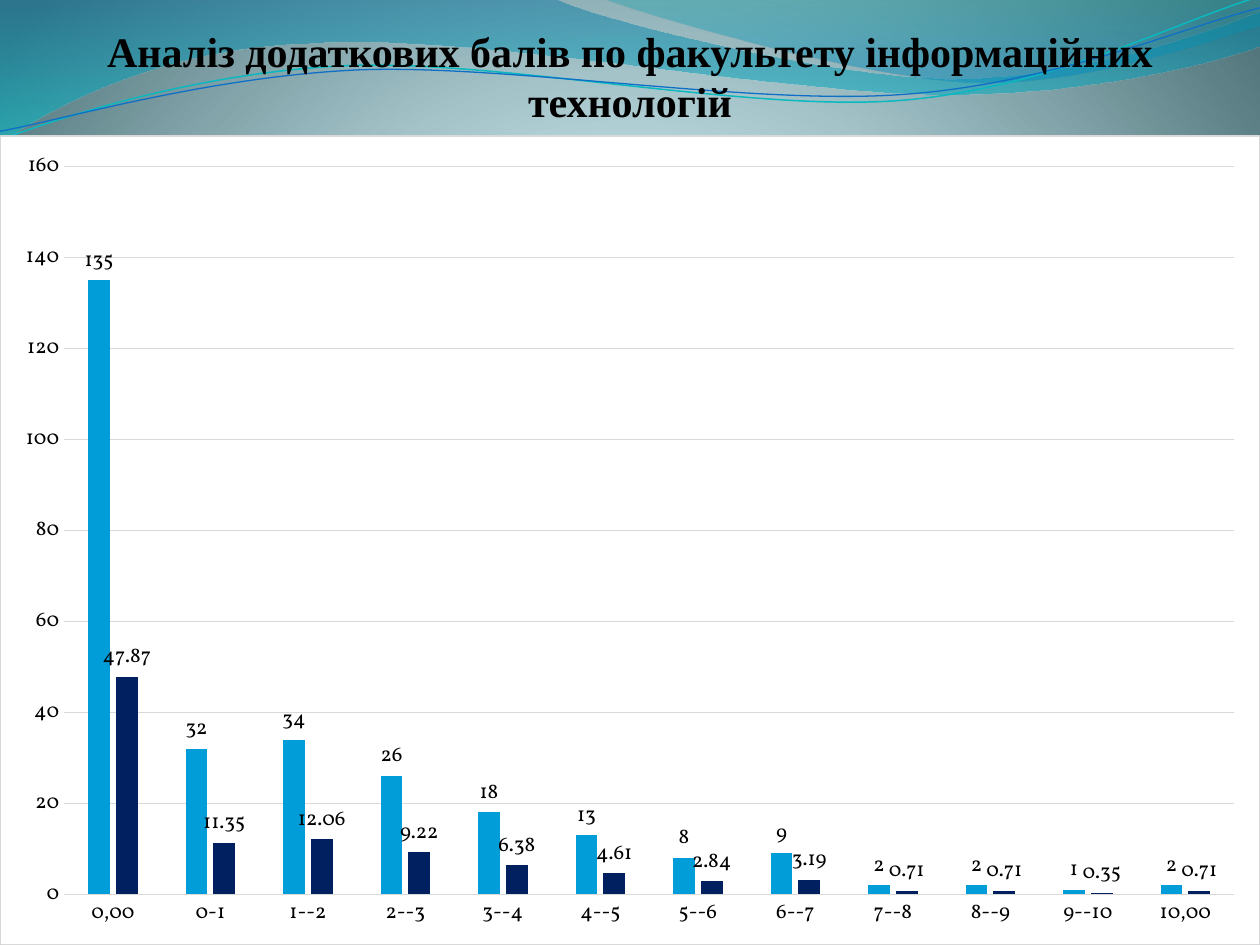
from math import cos, radians, sin

from lxml import etree
from pptx import Presentation
from pptx.chart.data import CategoryChartData
from pptx.dml.color import RGBColor
from pptx.enum.chart import XL_CHART_TYPE as ChartType
from pptx.enum.chart import XL_LABEL_POSITION as LabelPosition
from pptx.enum.chart import XL_TICK_MARK as TickMark
from pptx.enum.text import MSO_ANCHOR as Anchor
from pptx.enum.text import PP_ALIGN as Align
from pptx.oxml import parse_xml
from pptx.oxml.ns import nsdecls, qn
from pptx.util import Pt

COLORS = {
    "text": "000000", "white": "FFFFFF", "grid": "D9D9D9",
    "count": "009DD9", "percent": "002060",
    "wave_teal": "0AB8BF", "wave_blue": "0F6FC6",
    "band_blue": "0074A1", "band_cyan": "00C6CF",
    "corner_teal": "00A1A9", "corner_blue": "008BBF",
    "back_center": "DEFBFF", "back_middle": "DDFAFF", "back_edge": "52767C",
}
LINEAR = '<a:lin ang="5400000" scaled="0"/>'
CIRCLE = ('<a:path path="circle">'
          '<a:fillToRect l="10000" t="110000" r="10000" b="100000"/></a:path>')


def color(name):
    return RGBColor.from_string(COLORS[name])


def gradient(stops, direction):
    """Gradient fill from (position %, colour name, opacity %) stops."""
    marks = "".join(
        f'<a:gs pos="{position * 1000}"><a:srgbClr val="{COLORS[name]}">'
        f'<a:alpha val="{opacity * 1000}"/></a:srgbClr></a:gs>'
        for position, name, opacity in stops)
    return parse_xml(f'<a:gradFill {nsdecls("a")} rotWithShape="1">'
                     f'<a:gsLst>{marks}</a:gsLst>{direction}</a:gradFill>')


def turn(point, center, degrees):
    angle = radians(degrees)
    x, y = point[0] - center[0], point[1] - center[1]
    return (center[0] + x * cos(angle) - y * sin(angle),
            center[1] + x * sin(angle) + y * cos(angle))


class SlideBuilder:
    font = "Times New Roman"
    chart_font = "Vollkorn"

    def __init__(self, slide):
        self.slide = slide

    def background(self, stops):
        self.slide.background.fill.solid()
        solid = self.slide.element.find(".//" + qn("a:solidFill"))
        solid.getparent().replace(solid, gradient(stops, CIRCLE))

    def outline(self, start, segments, closed):
        """Each segment holds one point for a line or three for a cubic curve."""
        points = [(Pt(x), Pt(y)) for segment in segments for x, y in segment]
        builder = self.slide.shapes.build_freeform(Pt(start[0]), Pt(start[1]), scale=1.0)
        builder.add_line_segments(points, close=closed)
        shape = builder.convert_to_shape()
        shape.shadow.inherit = False
        lines = iter(list(shape.element.iter(qn("a:lnTo"))))
        for segment in segments:
            steps = [next(lines) for _ in segment]
            if len(steps) == 3:
                curve = etree.Element(qn("a:cubicBezTo"))
                steps[0].addprevious(curve)
                for step in steps:
                    curve.append(step[0])
                    step.getparent().remove(step)
        return shape

    def band(self, start, segments, stops):
        shape = self.outline(start, segments, True)
        shape.line.fill.background()
        shape.fill.solid()
        solid = shape.element.spPr.find(qn("a:solidFill"))
        solid.getparent().replace(solid, gradient(stops, LINEAR))

    def wave(self, start, segments, center, color_name, width, tilt=-2.7):
        level = [[turn(point, center, -tilt) for point in segment] for segment in segments]
        shape = self.outline(turn(start, center, -tilt), level, False)
        shape.rotation = tilt
        shape.fill.background()
        shape.line.color.rgb = color(color_name)
        shape.line.width = Pt(width)

    def title(self, text, left, top, width, height, size):
        box = self.slide.shapes.add_textbox(Pt(left), Pt(top), Pt(width), Pt(height))
        frame = box.text_frame
        frame.word_wrap = True
        frame.vertical_anchor = Anchor.BOTTOM
        frame.margin_left = frame.margin_right = frame.margin_bottom = 0
        frame.margin_top = Pt(3.6)
        paragraph = frame.paragraphs[0]
        paragraph.alignment = Align.CENTER
        run = paragraph.add_run()
        run.text = text
        run.font.name, run.font.size, run.font.bold = self.font, Pt(size), True
        run.font.color.rgb = color("text")

    def column_chart(self, categories, series, left, top, width, height):
        """Series are (name, values, colour name, number format)."""
        data = CategoryChartData()
        data.categories = categories
        for name, values, _, number_format in series:
            data.add_series(name, values, number_format)
        chart = self.slide.shapes.add_chart(
            ChartType.COLUMN_CLUSTERED, Pt(left), Pt(top), Pt(width), Pt(height), data).chart
        chart.has_legend = chart.has_title = False
        chart.font.name, chart.font.size = self.chart_font, Pt(12)
        chart.font.color.rgb = color("text")

        # Columns and their labels
        plot = chart.plots[0]
        plot.gap_width, plot.overlap, plot.vary_by_categories = 219, -27, False
        for columns, (_, _, color_name, number_format) in zip(plot.series, series):
            columns.format.fill.solid()
            columns.format.fill.fore_color.rgb = color(color_name)
            labels = columns.data_labels
            labels.show_value = True
            labels.position = LabelPosition.OUTSIDE_END
            labels.number_format = number_format
            labels.number_format_is_linked = False

        # Axes
        value_axis, category_axis = chart.value_axis, chart.category_axis
        value_axis.minimum_scale, value_axis.maximum_scale = 0, 160
        value_axis.major_unit = 20
        value_axis.format.line.fill.background()
        for axis in (value_axis, category_axis):
            axis.major_tick_mark = axis.minor_tick_mark = TickMark.NONE
        for line in (value_axis.major_gridlines.format.line, category_axis.format.line):
            line.color.rgb = color("grid")
            line.width = Pt(0.75)

        # White chart area with a thin border
        area = parse_xml(
            f'<c:spPr {nsdecls("c", "a")}>'
            f'<a:solidFill><a:srgbClr val="{COLORS["white"]}"/></a:solidFill>'
            f'<a:ln w="{Pt(0.75)}"><a:solidFill><a:srgbClr val="{COLORS["grid"]}"/>'
            '</a:solidFill></a:ln></c:spPr>')
        chart.element.find(qn("c:chart")).addnext(area)


def main():
    presentation = Presentation()
    presentation.slide_width, presentation.slide_height = Pt(720), Pt(540)
    builder = SlideBuilder(presentation.slides.add_slide(presentation.slide_layouts[6]))

    # Background
    builder.background([(0, "back_center", 100), (25, "back_middle", 100),
                        (100, "back_edge", 100)])

    # Translucent bands at the top
    builder.band((0, 0), [
        [(317, -0.7)],
        [(343, 12), (478, 45), (546, 45)],
        [(614, 45), (690, 19), (720, 6.5)],
        [(720.7, 26)],
        [(708, 32), (626, 55), (537, 54)],
        [(448, 54), (275, 20), (185, 24.5)],
        [(93, 26), (33, 60), (-0.7, 81.4)],
        [(0, 0)],
    ], [(0, "band_blue", 45), (100, "band_cyan", 55)])
    builder.band((345, -0.7), [
        [(366, 8), (491, 44.5), (554, 47)],
        [(616, 50), (692, 23), (720, 15)],
        [(720, 0)],
        [(345, -0.7)],
    ], [(0, "corner_teal", 30), (80, "corner_blue", 45)])

    # Wave lines
    builder.wave((0, 80), [
        [(34.5, 67), (114, 41), (199.5, 37.5)],
        [(284.5, 34), (427, 64), (513.5, 57.5)],
        [(600, 51), (675.5, 11), (718.5, -1.5)],
    ], (359.3, 41.4), "wave_teal", 0.85)
    builder.wave((0, 75), [
        [(34, 69), (118, 44), (204, 40)],
        [(290, 36.5), (430, 60.5), (516, 54)],
        [(602, 48), (677.5, 15), (720, 4.5)],
    ], (359.6, 42.5), "wave_blue", 0.75)

    # Title
    builder.title("Аналіз додаткових балів по факультету інформаційних технологій",
                  36, 9.4, 648, 62.6, 24)

    # Chart
    ranges = ["0,00", "0-1"] + [f"{n}--{n + 1}" for n in range(1, 10)] + ["10,00"]
    counts = [135, 32, 34, 26, 18, 13, 8, 9, 2, 2, 1, 2]
    percents = [47.87, 11.35, 12.06, 9.22, 6.38, 4.61, 2.84, 3.19, 0.71, 0.71, 0.35, 0.71]
    builder.column_chart(ranges, [("Series 1", counts, "count", "General"),
                                  ("Series 2", percents, "percent", "0.00")],
                         0, 77.3, 720, 462.7)

    presentation.save("out.pptx")


if __name__ == "__main__":
    main()
